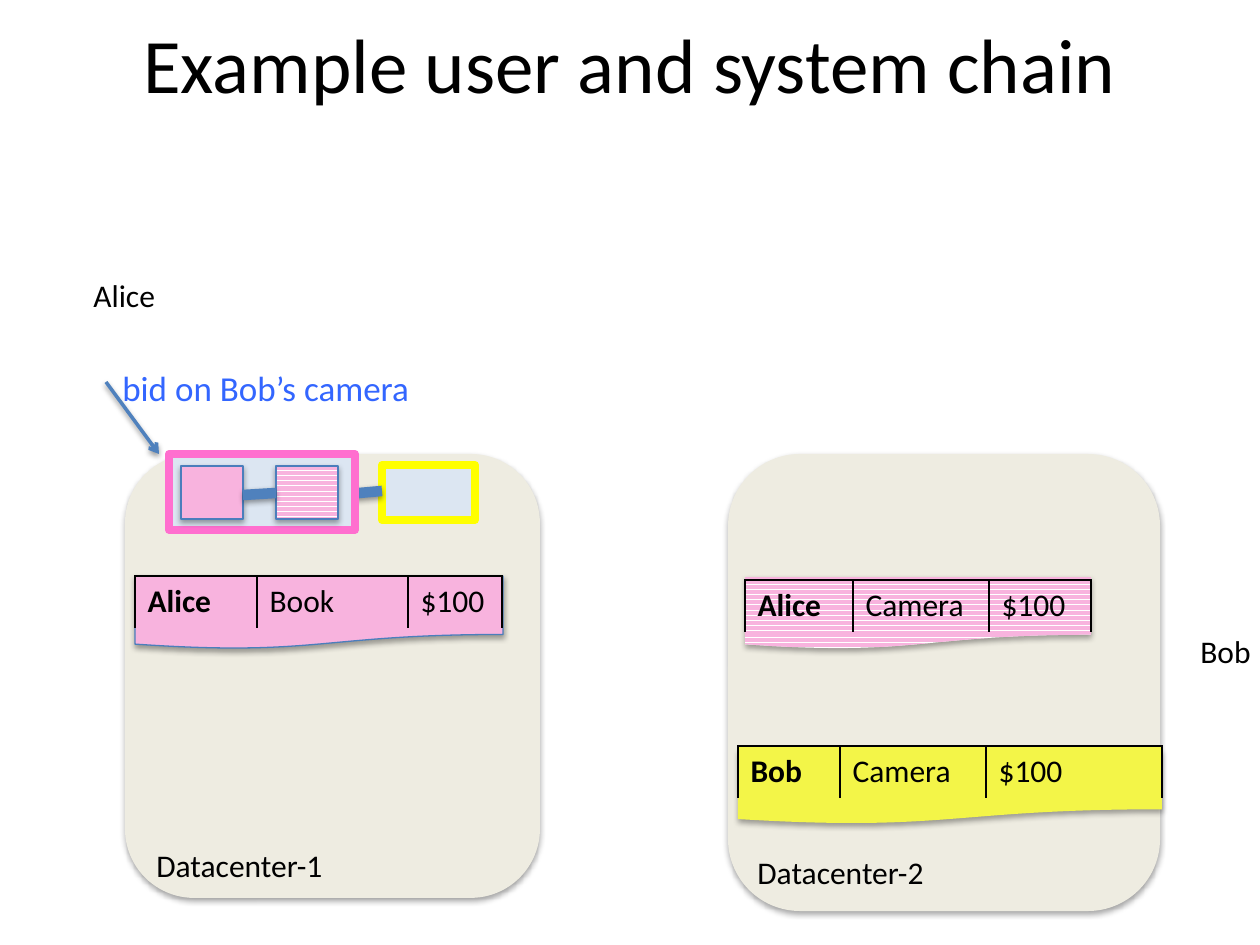
from dataclasses import dataclass

from lxml import etree
from pptx import Presentation
from pptx.dml.color import RGBColor
from pptx.enum.dml import MSO_PATTERN
from pptx.enum.shapes import MSO_CONNECTOR, MSO_SHAPE
from pptx.enum.text import MSO_ANCHOR, MSO_AUTO_SIZE, PP_ALIGN
from pptx.oxml.ns import qn
from pptx.util import Emu, Pt

BOX, ROUND, DOC = (MSO_SHAPE.RECTANGLE, MSO_SHAPE.ROUNDED_RECTANGLE,
                   MSO_SHAPE.FLOWCHART_DOCUMENT)
STRAIGHT = MSO_CONNECTOR.STRAIGHT
STRIPES = MSO_PATTERN.DARK_HORIZONTAL
SCALE = 914400 / 126  # EMU in one px
ROW = 52  # height of a record row


@dataclass(frozen=True)
class Theme:
    font: str = "Calibri"
    head: int = 44
    call: int = 20
    body: int = 18
    ink: str = "000000"
    white: str = "FFFFFF"
    sand: str = "EEECE1"
    pink: str = "F8B3DE"
    rose: str = "FF6FCF"
    lemon: str = "F3F548"
    yellow: str = "FFFF00"
    pale: str = "DCE6F2"
    edge: str = "4B7EBC"
    blue: str = "4F81BD"
    bid: str = "3366FF"


T = Theme()


def px(*nums):
    return [Emu(round(n * SCALE)) for n in nums]


def rgb(code):
    return RGBColor.from_string(code)


def paint(fill, color, striped=False):
    if striped:
        fill.patterned()
        fill.pattern = STRIPES
        fill.fore_color.rgb = rgb(color)
        fill.back_color.rgb = rgb(T.white)
    else:
        fill.solid()
        fill.fore_color.rgb = rgb(color)


def shade(shape, dist=23000, alpha=35000):
    """Give the shape a soft shadow straight below it."""
    props = shape._element.spPr
    for old in props.findall(qn("a:effectLst")):
        props.remove(old)
    list_el = etree.SubElement(props, qn("a:effectLst"))
    drop = etree.SubElement(list_el, qn("a:outerShdw"), blurRad="40000",
                            dist=str(dist), dir="5400000", rotWithShape="0")
    tint = etree.SubElement(drop, qn("a:srgbClr"), val=T.ink)
    etree.SubElement(tint, qn("a:alpha"), val=str(alpha))


def write(frame, text, size=T.body, color=T.ink, bold=False):
    run = frame.paragraphs[0].add_run()
    run.text = text
    font = run.font
    font.name, font.size, font.bold = T.font, Pt(size), bold
    font.color.rgb = rgb(color)


def add_box(shapes, kind, at, color, line=None, width=0.75,
            striped=False, shadow=True):
    box = shapes.add_shape(kind, *px(*at))
    box.shadow.inherit = False
    paint(box.fill, color, striped)
    if line:
        box.line.color.rgb = rgb(line)
        box.line.width = Pt(width)
    else:
        box.line.fill.background()
    if shadow:
        shade(box)


def add_label(shapes, at, text, size=T.body, color=T.ink):
    box = shapes.add_textbox(*px(*at))
    frame = box.text_frame
    frame.word_wrap = False
    frame.auto_size = MSO_AUTO_SIZE.SHAPE_TO_FIT_TEXT
    write(frame, text, size, color)


def add_link(shapes, ends, width, arrow=False):
    link = shapes.add_connector(STRAIGHT, *px(*ends))
    link.line.color.rgb = rgb(T.blue)
    link.line.width = Pt(width)
    if arrow:
        etree.SubElement(link.line._get_or_add_ln(), qn("a:tailEnd"),
                         type="arrow")
    shade(link, 20000, 38000)


def edge_cell(cell):
    """Draw the left, right and top borders; leave the bottom open."""
    props = cell._tc.get_or_add_tcPr()
    for side in ("L", "R", "T", "B"):
        line = etree.SubElement(props, qn("a:ln" + side), w="12700")
        if side == "B":
            etree.SubElement(line, qn("a:noFill"))
        else:
            solid = etree.SubElement(line, qn("a:solidFill"))
            etree.SubElement(solid, qn("a:srgbClr"), val=T.ink)


def add_row(shapes, left, top, cols, words, color, striped=False):
    area = px(left, top, sum(cols), ROW)
    table = shapes.add_table(1, len(cols), *area).table
    table.first_row = table.horz_banding = False
    for i, (wide, word) in enumerate(zip(cols, words)):
        table.columns[i].width = px(wide)[0]
        cell = table.cell(0, i)
        edge_cell(cell)
        paint(cell.fill, color, striped)
        write(cell.text_frame, word, bold=i == 0)


def set_title(slide, text):
    title = slide.shapes.title
    title.left, title.top, title.width, title.height = px(63, 3, 1134, 120)
    frame = title.text_frame
    frame.vertical_anchor = MSO_ANCHOR.MIDDLE
    frame.paragraphs[0].alignment = PP_ALIGN.CENTER
    write(frame, text, T.head)


def main():
    deck = Presentation()
    deck.slide_width, deck.slide_height = px(1260, 945)
    slide = deck.slides.add_slide(deck.slide_layouts[5])
    shapes = slide.shapes
    set_title(slide, "Example user and system chain")

    # Datacenters
    add_box(shapes, ROUND, (728, 454, 432, 457), T.sand)
    add_box(shapes, ROUND, (125, 454, 415, 444), T.sand)
    add_label(shapes, (144, 840, 203, 50), "Datacenter-1")
    add_label(shapes, (745, 847, 195, 50), "Datacenter-2")

    # Users
    add_label(shapes, (81, 270, 88, 50), "Alice")
    add_label(shapes, (1188, 626, 77, 50), "Bob")

    # Records: a document sheet with a row on top
    add_box(shapes, DOC, (135, 576, 368, 73), T.pink, T.edge)
    add_row(shapes, 135, 576, (122, 151, 94),
            ("Alice", "Book", "$100"), T.pink)
    add_box(shapes, DOC, (738, 750, 424, 74), T.lemon)
    add_row(shapes, 738, 746, (102, 146, 176),
            ("Bob", "Camera", "$100"), T.lemon)
    add_box(shapes, DOC, (745, 577, 346, 72), T.pink, striped=True)
    add_row(shapes, 745, 580, (108, 136, 102),
            ("Alice", "Camera", "$100"), T.pink, True)

    # Bid
    bid = shapes.add_group_shape().shapes
    add_label(bid, (110, 360, 318, 55), "bid on Bob’s camera", T.call, T.bid)
    add_link(bid, (106, 382, 159, 454), 2, True)

    # Chain
    add_box(shapes, BOX, (382, 465, 93, 55), T.pale, T.yellow, 4.5,
            shadow=False)
    add_link(shapes, (348, 494, 382, 491), 6)
    add_box(shapes, BOX, (169, 454, 186, 76), T.pale, T.rose, 4.5,
            shadow=False)
    for left, striped in ((181, False), (276, True)):
        add_box(shapes, BOX, (left, 466, 62, 53), T.pink, T.edge,
                striped=striped)
    add_link(shapes, (243, 495, 276, 493), 6)

    deck.save("out.pptx")


if __name__ == "__main__":
    main()
